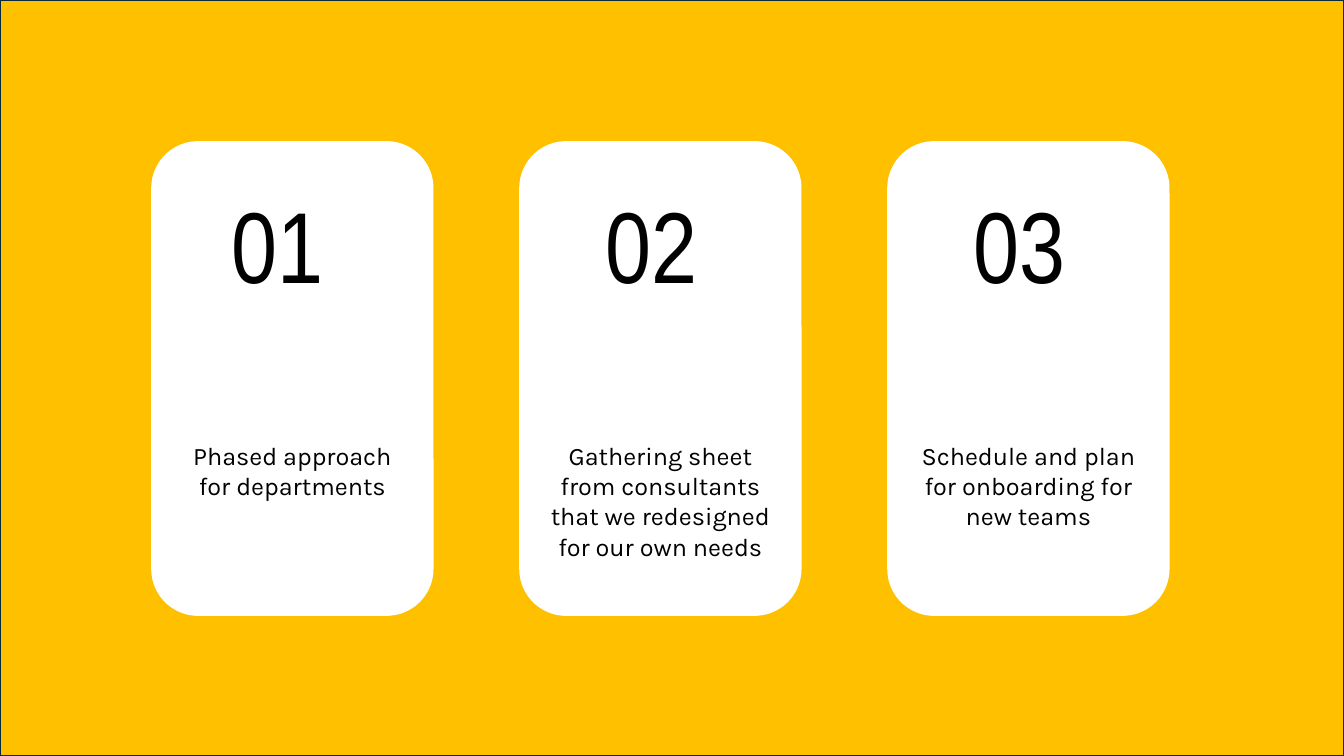
import pptx
import pptx.dml.color
import pptx.enum.shapes
import pptx.enum.text
import pptx.util

Inches = pptx.util.Inches
Pt = pptx.util.Pt
RGBColor = pptx.dml.color.RGBColor
MSO_SHAPE = pptx.enum.shapes.MSO_SHAPE
PP_ALIGN = pptx.enum.text.PP_ALIGN

AMBER = RGBColor(0xFF, 0xC0, 0x00)
NAVY = RGBColor(0x09, 0x2A, 0x39)
WHITE = RGBColor(0xFF, 0xFF, 0xFF)
BLACK = RGBColor(0x00, 0x00, 0x00)

WIDTH, HEIGHT = 13.33, 7.5
CARD_LEFT, CARD_TOP, CARD_PITCH = 1.5, 1.4, 3.65
CARD_WIDTH, CARD_HEIGHT = 2.8, 4.71

# Label, number offset from the card's left edge
CARDS = [
    ("Phased approach for departments", 0.7),
    ("Gathering sheet from consultants that we redesigned for our own needs", 0.76),
    ("Schedule and plan for onboarding for new teams", 0.76),
]


def write_text(sp, text, *, font, size, align, top=0.05):
    """Fill a shape with one top-anchored paragraph; top is the inset in inches."""
    tf = sp.text_frame
    tf.word_wrap = True
    tf.vertical_anchor = pptx.enum.text.MSO_ANCHOR.TOP
    tf.margin_top = Inches(top)
    p = tf.paragraphs[0]
    p.alignment = align
    r = p.add_run()
    r.text = text
    r.font.name = font
    r.font.size = Pt(size)
    r.font.color.rgb = BLACK


class Deck:
    """Holds the fonts and the current slide."""

    number_font = "Arial Narrow"
    label_font = "Karla"

    def __init__(self, prs):
        self.slide = prs.slides.add_slide(prs.slide_layouts[6])

    def shape(self, kind, left, top, width, height, fill, line=None):
        sp = self.slide.shapes.add_shape(
            kind, Inches(left), Inches(top), Inches(width), Inches(height))
        sp.shadow.inherit = False
        sp.fill.solid()
        sp.fill.fore_color.rgb = fill
        if line is None:
            sp.line.fill.background()
        else:
            sp.line.color.rgb = line
            sp.line.width = Pt(1.5)
        return sp

    def backdrop(self):
        self.shape(MSO_SHAPE.RECTANGLE, 0, 0, WIDTH, HEIGHT, AMBER, NAVY)

    def card(self, left, label):
        sp = self.shape(MSO_SHAPE.ROUNDED_RECTANGLE, left, CARD_TOP,
                        CARD_WIDTH, CARD_HEIGHT, WHITE)
        write_text(sp, label, font=self.label_font, size=18,
                   align=PP_ALIGN.CENTER, top=2.83)

    def number(self, left, text):
        sp = self.shape(MSO_SHAPE.RECTANGLE, left, 1.76, 1.28, 1.31, WHITE)
        write_text(sp, text, font=self.number_font, size=72,
                   align=PP_ALIGN.LEFT)


def main():
    prs = pptx.Presentation()
    prs.slide_width = Inches(WIDTH)
    prs.slide_height = Inches(HEIGHT)
    deck = Deck(prs)
    deck.backdrop()
    for i, (label, number_offset) in enumerate(CARDS):
        left = CARD_LEFT + i * CARD_PITCH
        deck.card(left, label)
        deck.number(left + number_offset, f"{i + 1:02d}")
    prs.save("out.pptx")


if __name__ == "__main__":
    main()
